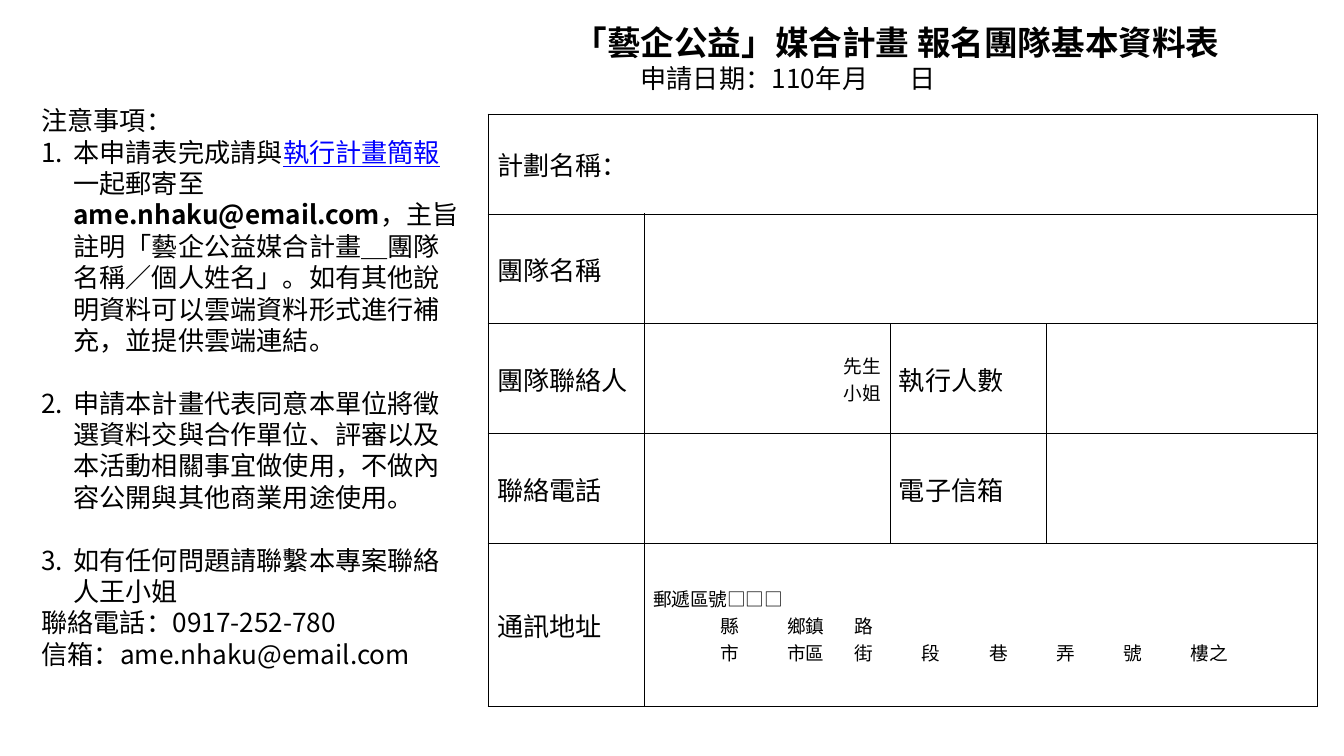
from lxml.etree import SubElement
from pptx import Presentation
from pptx.dml.color import RGBColor
from pptx.enum.text import MSO_ANCHOR, MSO_AUTO_SIZE, PP_ALIGN
from pptx.oxml.ns import qn
from pptx.util import Emu, Pt

SC, JP, TC = ("Noto Sans CJK " + region for region in ("SC", "JP", "TC"))
MAIL = "ame.nhaku@email.com"


def px(n):
    return Emu(round(n * 914400 / 134.4))


def color(value):
    return RGBColor.from_string(value)


def add_run(p, text, size=14, font=SC, fill="000000", bold=False, underline=False):
    r = p.add_run()
    r.text = text
    r.font.size, r.font.bold, r.font.underline = Pt(size), bold, underline
    r.font.name = font
    r.font.color.rgb = color(fill)
    SubElement(r.font._element, qn("a:ea"), typeface=font)
    return r


def format_paragraph(p, align=PP_ALIGN.LEFT, line=None, before=0, hang=0, tabs=()):
    p.alignment = align
    p.space_before = Pt(before)
    if line:
        p.line_spacing = Pt(line)
    pPr = p._p.get_or_add_pPr()
    pPr.set("marL", str(px(hang)))
    pPr.set("indent", str(-px(hang)))
    if hang:
        SubElement(pPr, qn("a:buFont"), typeface="+mj-lt")
        SubElement(pPr, qn("a:buAutoNum"), type="arabicPeriod")
    else:
        SubElement(pPr, qn("a:buNone"))
    if tabs:
        tab_list = SubElement(pPr, qn("a:tabLst"))
        for tab in tabs:
            SubElement(tab_list, qn("a:tab"), pos=str(px(tab)), algn="l")


class FormSlide:
    line = 16.8  # points between lines of 14 pt text

    def __init__(self, prs):
        self.s = prs.slides.add_slide(prs.slide_layouts[1])

    def fill_text(self, tf, paragraphs):
        """Each paragraph is a pair: a list of (text, run format) and its own format."""
        for i, (runs, form) in enumerate(paragraphs):
            p = tf.paragraphs[0] if i == 0 else tf.add_paragraph()
            format_paragraph(p, **form)
            for text, style in runs:
                add_run(p, text, **style)

    def placeholder(self, idx, box, paragraphs):
        sp = self.s.placeholders[idx]
        sp.left, sp.top, sp.width, sp.height = map(px, box)
        tf = sp.text_frame
        tf.word_wrap, tf.auto_size = True, MSO_AUTO_SIZE.NONE
        tf.vertical_anchor = MSO_ANCHOR.TOP
        self.fill_text(tf, paragraphs)

    def table(self, left, top, widths, heights, merges):
        frame = self.s.shapes.add_table(len(heights), len(widths), px(left), px(top),
                                        px(sum(widths)), px(sum(heights)))
        table = frame.table
        table.first_row = table.horz_banding = False
        for column, width in zip(table.columns, widths):
            column.width = px(width)
        for row, height in zip(table.rows, heights):
            row.height = px(height)
        for cell in table.iter_cells():
            self.style_cell(cell)
        for row, first, last in merges:
            table.cell(row, first).merge(table.cell(row, last))
        return table

    def style_cell(self, cell):
        cell.vertical_anchor = MSO_ANCHOR.MIDDLE
        cell.margin_left = cell.margin_right = px(9)
        cell.margin_top = cell.margin_bottom = px(7)
        tcPr = cell._tc.get_or_add_tcPr()
        for side in ("a:lnL", "a:lnR", "a:lnT", "a:lnB"):
            ln = SubElement(tcPr, qn(side), w=str(Pt(0.5)))
            SubElement(SubElement(ln, qn("a:solidFill")), qn("a:srgbClr"), val="000000")
        cell.fill.background()


def main():
    prs = Presentation()
    prs.slide_width, prs.slide_height = px(1344), px(756)
    form = FormSlide(prs)

    # Heading and application date
    form.placeholder(0, (560, 13, 683, 126), [
        ([("「藝企公益」媒合計畫 報名團隊基本資料表", dict(size=18, font=JP, bold=True))],
         dict(line=22.8)),
        ([("\t申請日期：110年\t月\t日", dict(font=JP))],
         dict(line=form.line, tabs=(309, 562, 630))),
    ])

    # Notes
    plain = dict(line=form.line)
    item = dict(plain, hang=32)
    later_item = dict(item, before=form.line)
    form.placeholder(1, (28, 98, 448, 616), [
        ([("注意事項：", {})], plain),
        ([("本申請表完成請與", {}),
          ("執行計畫簡報", dict(fill="0000FF", underline=True)),
          ("一起郵寄至", {}),
          (MAIL, dict(bold=True)),
          ("，主旨註明「藝企公益媒合計畫＿團隊名稱／個人姓名」。如有其他說明資料"
           "可以雲端資料形式進行補充，並提供雲端連結。", {})], item),
        ([("申請本計畫代表同意本單位將徵選資料交與合作單位、評審以及本活動相關事宜"
           "做使用，不做內容公開與其他商業用途使用。", {})], later_item),
        ([("如有任何問題請聯繫本專案聯絡人王小姐", {})], later_item),
        ([("聯絡電話：0917-252-780", {})], plain),
        ([("信箱：" + MAIL, {})], plain),
    ])

    # Form table
    table = form.table(488, 114, (156, 246, 156, 271), (100, 110, 110, 110, 163),
                       merges=[(0, 0, 3), (1, 1, 3), (4, 1, 3)])
    labels = {(0, 0): ("計劃名稱：", SC), (1, 0): ("團隊名稱", SC),
              (2, 0): ("團隊聯絡人", SC), (2, 2): ("執行人數", JP),
              (3, 0): ("聯絡電話", SC), (3, 2): ("電子信箱", JP),
              (4, 0): ("通訊地址", SC)}
    for (row, col), (text, font) in labels.items():
        form.fill_text(table.cell(row, col).text_frame,
                       [([(text, dict(font=font))], dict(align=PP_ALIGN.JUSTIFY))])

    # Form of address and postal address
    small = dict(size=10, font=JP)
    form.fill_text(table.cell(2, 1).text_frame,
                   [([(text, small)], dict(align=PP_ALIGN.RIGHT)) for text in ("先生", "小姐")])
    stops = dict(tabs=(62, 135, 218, 278, 334, 390, 447, 503))
    form.fill_text(table.cell(4, 1).text_frame, [
        ([("郵遞區號□□□", small)], {}),
        ([("\t縣\t", small), ("鄉", dict(small, font=TC)), ("鎮\t路", small)], stops),
        ([("\t市\t市區\t街\t段\t巷\t弄\t號\t樓之", small)], stops),
    ])

    prs.save("out.pptx")


if __name__ == "__main__":
    main()
